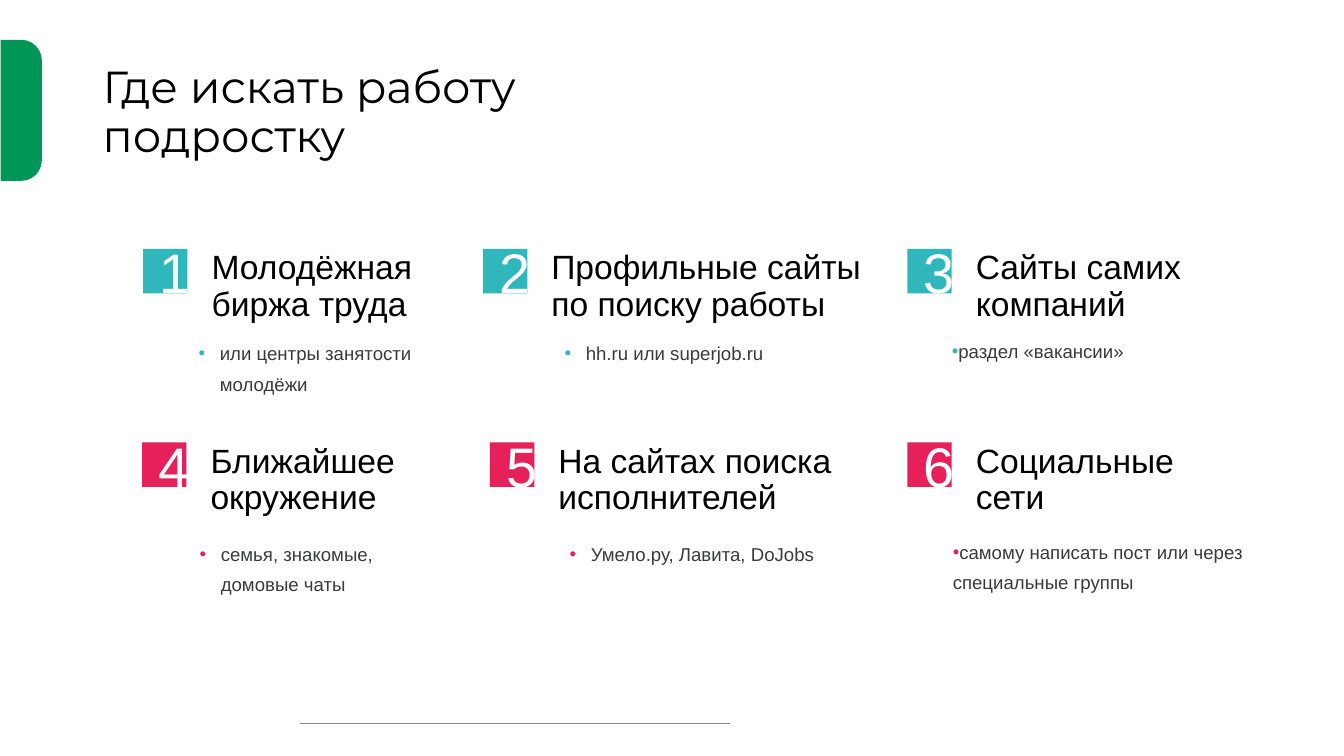
from lxml.etree import SubElement
from pptx import Presentation
from pptx.dml.color import RGBColor
from pptx.enum.shapes import MSO_CONNECTOR as Line, MSO_SHAPE as Shape
from pptx.enum.text import MSO_ANCHOR as Anchor, MSO_AUTO_SIZE as Fit
from pptx.oxml.ns import qn
from pptx.util import Inches, Pt

HUES = {"green": "009657", "teal": "30B7BC", "pink": "E62059", "rule": "898989",
        "black": "000000", "white": "FFFFFF", "note": "393B3B",
        "teal dot": "33B5BA", "pink dot": "E5205A"}

ROWS = [
    ("teal", 2.47, 3.29, [
        (1.42, 2.39, "Молодёжная биржа труда", 1.6, 3.28, "или центры занятости молодёжи"),
        (4.79, 3.34, "Профильные сайты по поиску работы", 5.23, 3.28, "hh.ru или superjob.ru"),
        (9, 2.57, "Сайты самих компаний", 9.44, 3.28, "раздел «вакансии»")]),
    ("pink", 4.39, 5.28, [
        (1.41, 3.26, "Ближайшее окружение", 1.61, 2.89, "семья, знакомые, домовые чаты"),
        (4.86, 3.26, "На сайтах поиска исполнителей", 5.28, 2.89, "Умело.ру, Лавита, DoJobs"),
        (9, 2.83, "Социальные сети", 9.45, 2.96,
         "самому написать пост или через специальные группы")]),
]


def tint(name):
    """Return a named colour."""
    return RGBColor.from_string(HUES[name])


def block(shapes, kind, box, hue):
    """Add a plain filled shape."""
    item = shapes.add_shape(kind, *map(Inches, box))
    item.shadow.inherit = False
    item.fill.solid()
    item.fill.fore_color.rgb = tint(hue)
    item.line.fill.background()
    return item


def label(shapes, box, text, size, hue, pad=(0.1, 0.05), font="Arial", space=None):
    """Add a wrapped text box and return its frame."""
    frame = shapes.add_textbox(*map(Inches, box)).text_frame
    frame.word_wrap = True
    frame.margin_left = frame.margin_right = Inches(pad[0])
    frame.margin_top = frame.margin_bottom = Inches(pad[1])
    para = frame.paragraphs[0]
    para.text = text
    para.line_spacing = space
    for run in para.runs:
        run.font.name = font
        run.font.size = Pt(size)
        run.font.color.rgb = tint(hue)
    return frame


def badge(slide, left, top, digit, hue):
    """Add a numbered square as a group."""
    shapes = slide.shapes.add_group_shape().shapes
    block(shapes, Shape.RECTANGLE, (left, top, 0.44, 0.44), hue)
    box = (left + 0.14, top - 0.13, 0.35, 0.71)
    frame = label(shapes, box, str(digit), 39.8, "white", (0.02, 0.02))
    frame.vertical_anchor = Anchor.MIDDLE
    frame.auto_size = Fit.SHAPE_TO_FIT_TEXT


def note(slide, box, text, hue, pad, indent):
    """Add a bulleted note."""
    frame = label(slide.shapes, box, text, 13.3, "note", (pad, pad), space=1.37)
    props = frame.paragraphs[0]._p.get_or_add_pPr()
    props.set("marL", str(Inches(indent)))
    props.set("indent", str(Inches(-0.21)))
    color = SubElement(props, qn("a:buClr"))
    SubElement(color, qn("a:srgbClr"), val=HUES[hue + " dot"])
    SubElement(props, qn("a:buFont"), typeface="Arial")
    SubElement(props, qn("a:buChar"), char="•")


def rule(slide, start, end, top):
    """Add the thin footer line."""
    line = slide.shapes.add_connector(Line.STRAIGHT, *map(Inches, (start, top, end, top)))
    line.line.color.rgb = tint("rule")
    line.line.width = Pt(0.75)
    SubElement(line._element.spPr, qn("a:effectLst"))


def main():
    """Build and save the slide."""
    deck = Presentation()
    deck.slide_width, deck.slide_height = Inches(13.33), Inches(7.5)
    slide = deck.slides.add_slide(deck.slide_layouts[6])
    rule(slide, 2.98, 7.24, 7.18)
    tab = block(slide.shapes, Shape.ROUND_2_SAME_RECTANGLE, (-0.49, 0.89, 1.4, 0.41), "green")
    tab.rotation = 90
    tab.adjustments[0] = 0.5
    title = label(slide.shapes, (0.92, 0.4, 11.5, 1.45), "Где искать работу\vподростку",
                  32, "black", font="Montserrat", space=0.9)
    title.vertical_anchor = Anchor.MIDDLE

    for row, (hue, top, low, cells) in enumerate(ROWS):
        for col, (left, width, head, start, span, text) in enumerate(cells):
            label(slide.shapes, (left + 0.58, top - 0.03, width, 1.12), head, 24, "black",
                  space=0.9)
            badge(slide, left, top, row * 3 + col + 1, hue)
            pad, indent = (0, 0) if col == 2 else (0.02, 0.56)
            note(slide, (start, low, span, 0.62), text, hue, pad, indent)
    deck.save("out.pptx")


if __name__ == "__main__":
    main()
